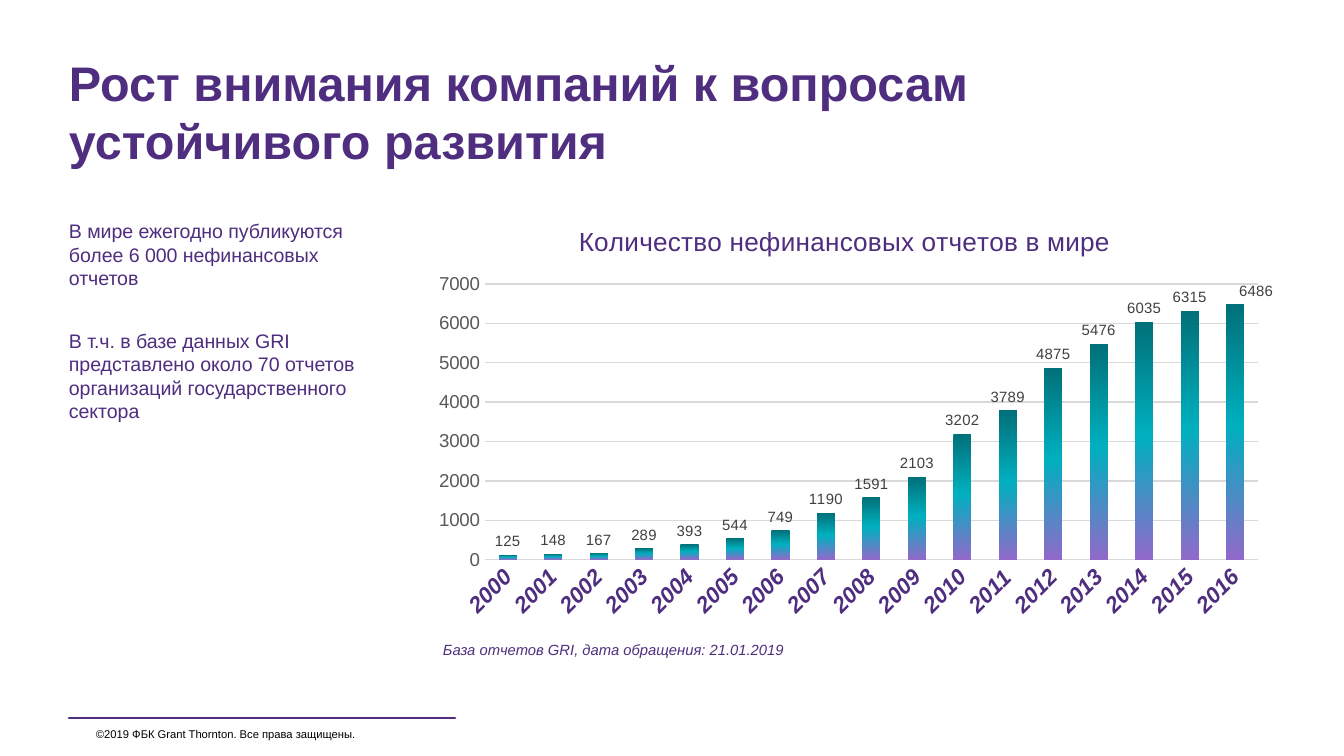
from dataclasses import dataclass

from lxml.etree import SubElement
from pptx import Presentation
from pptx.chart.data import CategoryChartData
from pptx.dml.color import RGBColor
from pptx.enum.chart import XL_CHART_TYPE, XL_LABEL_POSITION, XL_TICK_MARK
from pptx.enum.shapes import MSO_CONNECTOR
from pptx.enum.text import MSO_ANCHOR
from pptx.oxml import parse_xml
from pptx.oxml.ns import nsdecls, qn
from pptx.util import Pt

EMU_PER_PX = 914400 / 134.4


@dataclass(frozen=True)
class Theme:
    font: str = "Arial"
    purple: str = "4F2D7F"
    black: str = "000000"
    axis_gray: str = "595959"
    label_gray: str = "404040"
    grid_gray: str = "D9D9D9"
    bar_stops: tuple = ((0, "007079"), (48, "00B0BF"), (100, "9169CA"))
    title_size: float = 26
    chart_title_size: float = 14
    year_size: float = 12
    body_size: float = 10.5
    value_axis_size: float = 10
    label_size: float = 8
    source_size: float = 7.9
    footer_size: float = 6


THEME = Theme()

REPORTS_BY_YEAR = dict(zip(
    range(2000, 2017),
    (125, 148, 167, 289, 393, 544, 749, 1190, 1591, 2103, 3202, 3789,
     4875, 5476, 6035, 6315, 6486),
))

CHART_BOX = (422, 204, 853, 421)
PLOT_BOX = (63, 80, 773, 276)  # inside the chart
LAST_LABEL_SHIFT = (21, 0)


def px(length):
    return round(length * EMU_PER_PX)


def color(value):
    return RGBColor.from_string(value)


def set_font(font, size, ink, bold=False, italic=False):
    font.name = THEME.font
    font.size = Pt(size)
    font.bold = bold
    font.italic = italic
    font.color.rgb = color(ink)


def add_text(slide, box, *paragraphs, size, ink=THEME.purple, bold=False,
             italic=False, anchor=MSO_ANCHOR.TOP, gap=0):
    """Add a text box without insets; gap is the space between paragraphs in points."""
    frame = slide.shapes.add_textbox(*map(px, box)).text_frame
    frame.word_wrap = True
    frame.vertical_anchor = anchor
    frame.margin_left = frame.margin_right = 0
    frame.margin_top = frame.margin_bottom = 0
    for index, text in enumerate(paragraphs):
        paragraph = frame.add_paragraph() if index else frame.paragraphs[0]
        paragraph.space_before = Pt(gap if index else 0)
        run = paragraph.add_run()
        run.text = text
        set_font(run.font, size, ink, bold, italic)


def add_rule(slide, left, right, y, width):
    rule = slide.shapes.add_connector(
        MSO_CONNECTOR.STRAIGHT, px(left), px(y), px(right), px(y))
    rule.line.color.rgb = color(THEME.purple)
    rule.line.width = Pt(width)
    rule.line._get_or_add_ln().set("cap", "rnd")
    SubElement(rule._element.spPr, qn("a:effectLst"))


def manual_layout(x, y, width=None, height=None):
    """Return a c:layout in chart pixels: an offset, or a plot area if sized."""
    chart_width, chart_height = CHART_BOX[2:]
    settings = {}
    if width is not None:
        settings = {"layoutTarget": "inner", "xMode": "edge", "yMode": "edge"}
    settings.update(x=x / chart_width, y=y / chart_height)
    if width is not None:
        settings.update(w=width / chart_width, h=height / chart_height)
    children = "".join(f'<c:{tag} val="{value}"/>' for tag, value in settings.items())
    return parse_xml(f"<c:layout {nsdecls('c')}><c:manualLayout>{children}"
                     "</c:manualLayout></c:layout>")


def fill_with_gradient(series):
    stops = "".join(
        f'<a:gs pos="{position * 1000}"><a:srgbClr val="{value}"/></a:gs>'
        for position, value in THEME.bar_stops)
    series._element.get_or_add_spPr().append(parse_xml(
        f"<a:gradFill {nsdecls('a')}><a:gsLst>{stops}</a:gsLst>"
        '<a:lin ang="5400000" scaled="0"/></a:gradFill>'))


def format_axes(chart):
    years, values = chart.category_axis, chart.value_axis
    for axis in (years, values):
        axis.major_tick_mark = axis.minor_tick_mark = XL_TICK_MARK.NONE
    set_font(years.tick_labels.font, THEME.year_size, THEME.purple,
             bold=True, italic=True)
    years._element.find(qn("c:txPr")).find(qn("a:bodyPr")).set("rot", "-2700000")
    set_font(values.tick_labels.font, THEME.value_axis_size, THEME.axis_gray)
    values.minimum_scale, values.maximum_scale, values.major_unit = 0, 7000, 1000
    values.format.line.fill.background()
    values.has_major_gridlines = True
    for line in (years.format.line, values.major_gridlines.format.line):
        line.color.rgb = color(THEME.grid_gray)
        line.width = Pt(0.75)


def format_labels(series):
    """Show values above the bars, with the last one moved to the right."""
    labels = series.data_labels
    labels.show_value = True
    last_label = series.points[len(REPORTS_BY_YEAR) - 1].data_label
    for label in (labels, last_label):
        label.position = XL_LABEL_POSITION.OUTSIDE_END
        set_font(label.font, THEME.label_size, THEME.label_gray)
    labels._element.find(qn("c:dLbl")).insert(1, manual_layout(*LAST_LABEL_SHIFT))


def add_report_chart(slide, title):
    data = CategoryChartData()
    data.categories = [str(year) for year in REPORTS_BY_YEAR]
    data.add_series("Series 1", REPORTS_BY_YEAR.values())
    chart = slide.shapes.add_chart(
        XL_CHART_TYPE.COLUMN_CLUSTERED, *map(px, CHART_BOX), data).chart
    chart.font.name = THEME.font
    chart.has_legend = False
    chart.has_title = True
    chart.chart_title.include_in_layout = False
    paragraph = chart.chart_title.text_frame.paragraphs[0]
    run = paragraph.add_run()
    run.text = title
    set_font(run.font, THEME.chart_title_size, THEME.purple)

    plot = chart.plots[0]
    plot.gap_width = 150
    plot.vary_by_categories = False
    series = plot.series[0]
    series.invert_if_negative = False
    fill_with_gradient(series)
    format_labels(series)
    format_axes(chart)

    plot_area = chart._chartSpace.chart.plotArea
    for layout in plot_area.findall(qn("c:layout")):
        plot_area.remove(layout)
    plot_area.insert(0, manual_layout(*PLOT_BOX))


def main():
    presentation = Presentation()
    presentation.slide_width = px(1344)
    presentation.slide_height = px(756)
    slide = presentation.slides.add_slide(presentation.slide_layouts[6])

    add_rule(slide, 69, 455, 718, width=1.5)
    add_text(slide, (96, 721, 386, 27),
             "©2019 ФБК Grant Thornton. Все права защищены.",
             size=THEME.footer_size, ink=THEME.black, anchor=MSO_ANCHOR.MIDDLE)
    add_text(slide, (69, 53, 1205, 123),
             "Рост внимания компаний к вопросам устойчивого развития",
             size=THEME.title_size, bold=True)
    add_report_chart(slide, "Количество нефинансовых отчетов в мире ")
    add_text(slide, (443, 641, 406, 36),
             "База отчетов GRI, дата обращения: 21.01.2019",
             size=THEME.source_size, italic=True)
    add_text(slide, (69, 219, 312, 208),
             "В мире ежегодно публикуются более 6 000 нефинансовых отчетов",
             "В т.ч. в базе данных GRI представлено около 70 отчетов "
             "организаций государственного сектора",
             size=THEME.body_size, gap=21)

    presentation.save("out.pptx")


if __name__ == "__main__":
    main()
